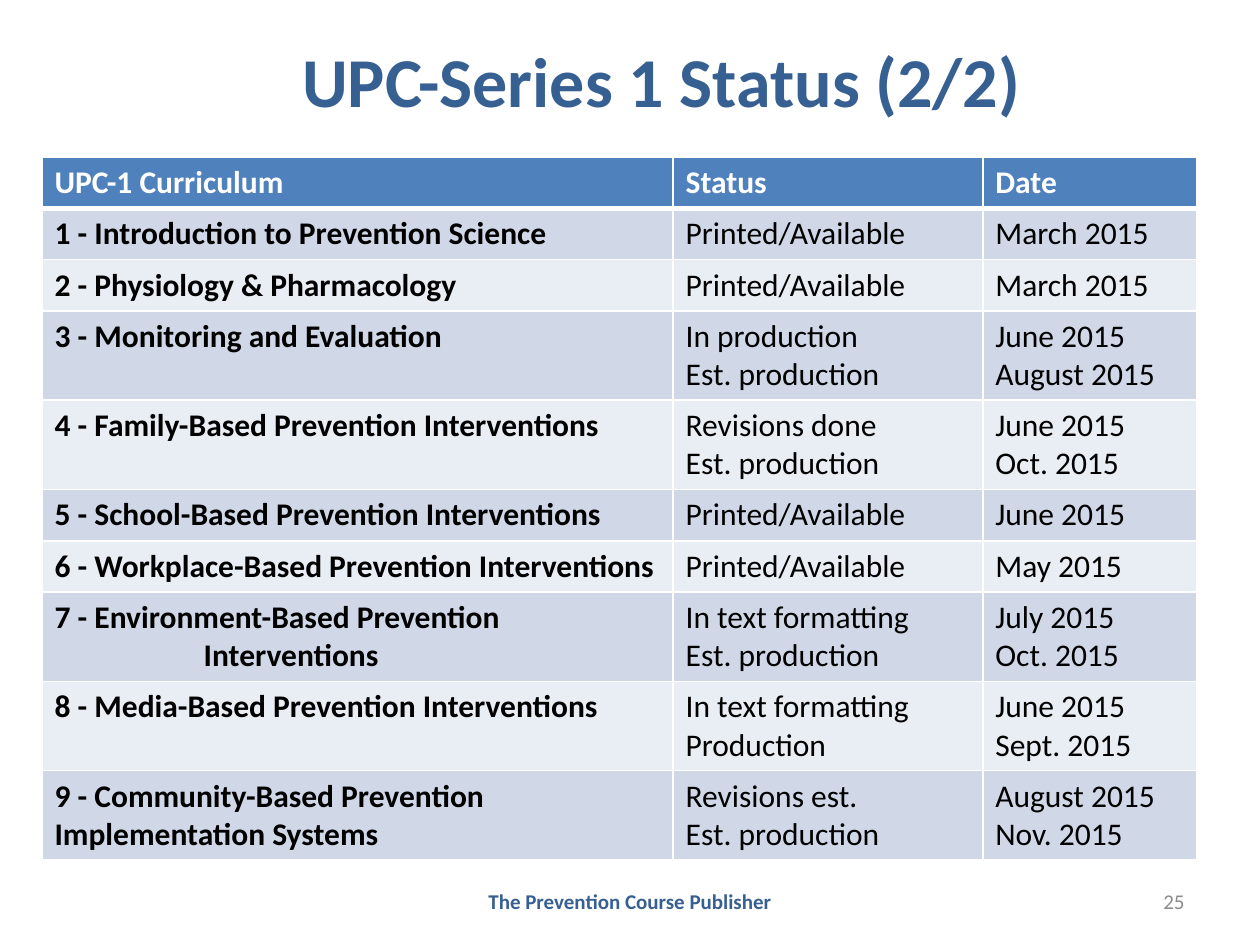
from dataclasses import dataclass
from lxml.etree import SubElement
from pptx import Presentation
from pptx.dml.color import RGBColor
from pptx.enum.text import MSO_ANCHOR, PP_ALIGN
from pptx.oxml.ns import qn
from pptx.slide import Slide
from pptx.util import Inches, Pt

GRID = 1 / 12  # inches per grid unit: 120 columns by 90 rows


def units(count):
    return Inches(count * GRID)


def color(hex_value):
    return RGBColor.from_string(hex_value)


def write(paragraph, text, font="Calibri", size=18, fill="000000", bold=False,
          align=PP_ALIGN.LEFT, indent=0):
    paragraph.alignment = align
    if indent:
        paragraph._p.get_or_add_pPr().set("marL", str(units(indent)))
    run = paragraph.add_run()
    run.text = text
    run.font.name = font
    run.font.size = Pt(size)
    run.font.bold = bold
    run.font.color.rgb = color(fill)


@dataclass
class StatusSlide:
    slide: Slide
    accent: str = "376092"
    header: str = "4F81BD"
    bands: tuple = ("D0D8E8", "E9EDF4")
    rule: str = "FFFFFF"

    def text(self, words, left, top, width, height, anchor=MSO_ANCHOR.MIDDLE, **style):
        box = self.slide.shapes.add_textbox(*map(units, (left, top, width, height)))
        box.text_frame.word_wrap = True
        box.text_frame.vertical_anchor = anchor
        write(box.text_frame.paragraphs[0], words, **style)

    def borders(self, cell, bottom):
        properties = cell._tc.get_or_add_tcPr()
        widths = {"a:lnL": 1, "a:lnR": 1, "a:lnT": 1, "a:lnB": bottom}
        for position, (tag, width) in enumerate(widths.items()):
            line = SubElement(properties, qn(tag), w=str(Pt(width)))
            fill = SubElement(line, qn("a:solidFill"))
            SubElement(fill, qn("a:srgbClr"), val=self.rule)
            properties.insert(position, line)

    def cell(self, cell, lines, background, bottom=1, indent=0, **style):
        cell.fill.solid()
        cell.fill.fore_color.rgb = color(background)
        self.borders(cell, bottom)
        frame = cell.text_frame
        for number, line in enumerate(lines):
            paragraph = frame.add_paragraph() if number else frame.paragraphs[0]
            write(paragraph, line, indent=indent if number else 0, **style)

    def table(self, headings, rows, left, top, widths, row_height, line_height):
        heights = [row_height] + [
            row_height + line_height * (max(map(len, row)) - 1) for row in rows]
        frame = self.slide.shapes.add_table(
            len(heights), len(widths), units(left), units(top),
            units(sum(widths)), units(sum(heights)))
        table = frame.table
        for column, width in zip(table.columns, widths):
            column.width = units(width)
        for row, height in zip(table.rows, heights):
            row.height = units(height)

        for column, heading in enumerate(headings):
            self.cell(table.cell(0, column), [heading], self.header, bottom=3,
                      fill="FFFFFF", bold=True)
        for number, row in enumerate(rows):
            for column, lines in enumerate(row):
                self.cell(table.cell(number + 1, column), lines,
                          self.bands[number % 2], bold=column == 0,
                          indent=0 if column else 14.2)


HEADINGS = ["UPC-1 Curriculum", "Status", "Date"]
AVAILABLE = ["Printed/Available"]
ESTIMATE = "Est. production"
CURRICULA = [
    (["1 - Introduction to Prevention Science"], AVAILABLE, ["March 2015"]),
    (["2 - Physiology & Pharmacology"], AVAILABLE, ["March 2015"]),
    (["3 - Monitoring and Evaluation"],
     ["In production", ESTIMATE], ["June 2015", "August 2015"]),
    (["4 - Family-Based Prevention Interventions"],
     ["Revisions done", ESTIMATE], ["June 2015", "Oct. 2015"]),
    (["5 - School-Based Prevention Interventions"], AVAILABLE, ["June 2015"]),
    (["6 - Workplace-Based Prevention Interventions"], AVAILABLE, ["May 2015"]),
    (["7 - Environment-Based Prevention", "Interventions"],
     ["In text formatting", ESTIMATE], ["July 2015", "Oct. 2015"]),
    (["8 - Media-Based Prevention Interventions"],
     ["In text formatting", "Production"], ["June 2015", "Sept. 2015"]),
    (["9 - Community-Based Prevention Implementation Systems"],
     ["Revisions est.", ESTIMATE], ["August 2015", "Nov. 2015"]),
]


def main():
    presentation = Presentation()
    presentation.slide_width = units(120)
    presentation.slide_height = units(90)
    page = StatusSlide(presentation.slides.add_slide(presentation.slide_layouts[6]))

    # Title
    page.text("UPC-Series 1 Status (2/2)", 12, 3, 102, 15.6, anchor=MSO_ANCHOR.TOP,
              size=40, fill=page.accent, bold=True, align=PP_ALIGN.CENTER)

    # Footer and page number
    page.text("The Prevention Course Publisher", 41, 83.4, 38, 4.8, size=12,
              fill=page.accent, bold=True, align=PP_ALIGN.CENTER)
    page.text("25", 86, 83.4, 28, 4.8, size=12, fill="8C8C8C", align=PP_ALIGN.RIGHT)

    # Status table
    page.table(HEADINGS, CURRICULA, left=4, top=15, widths=[60.1, 29.5, 20.4],
               row_height=4.87, line_height=3.65)

    presentation.save("out.pptx")


if __name__ == "__main__":
    main()
